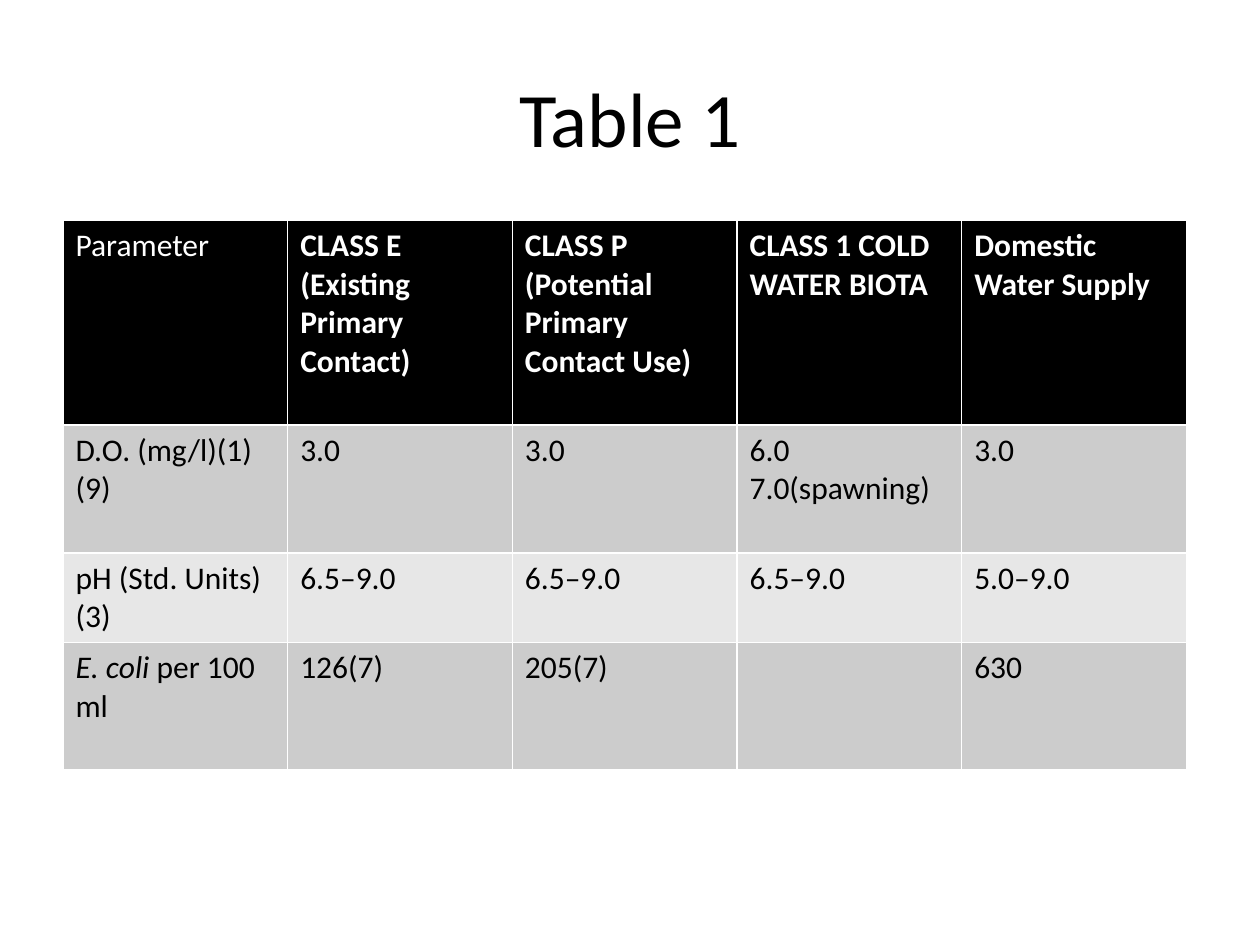
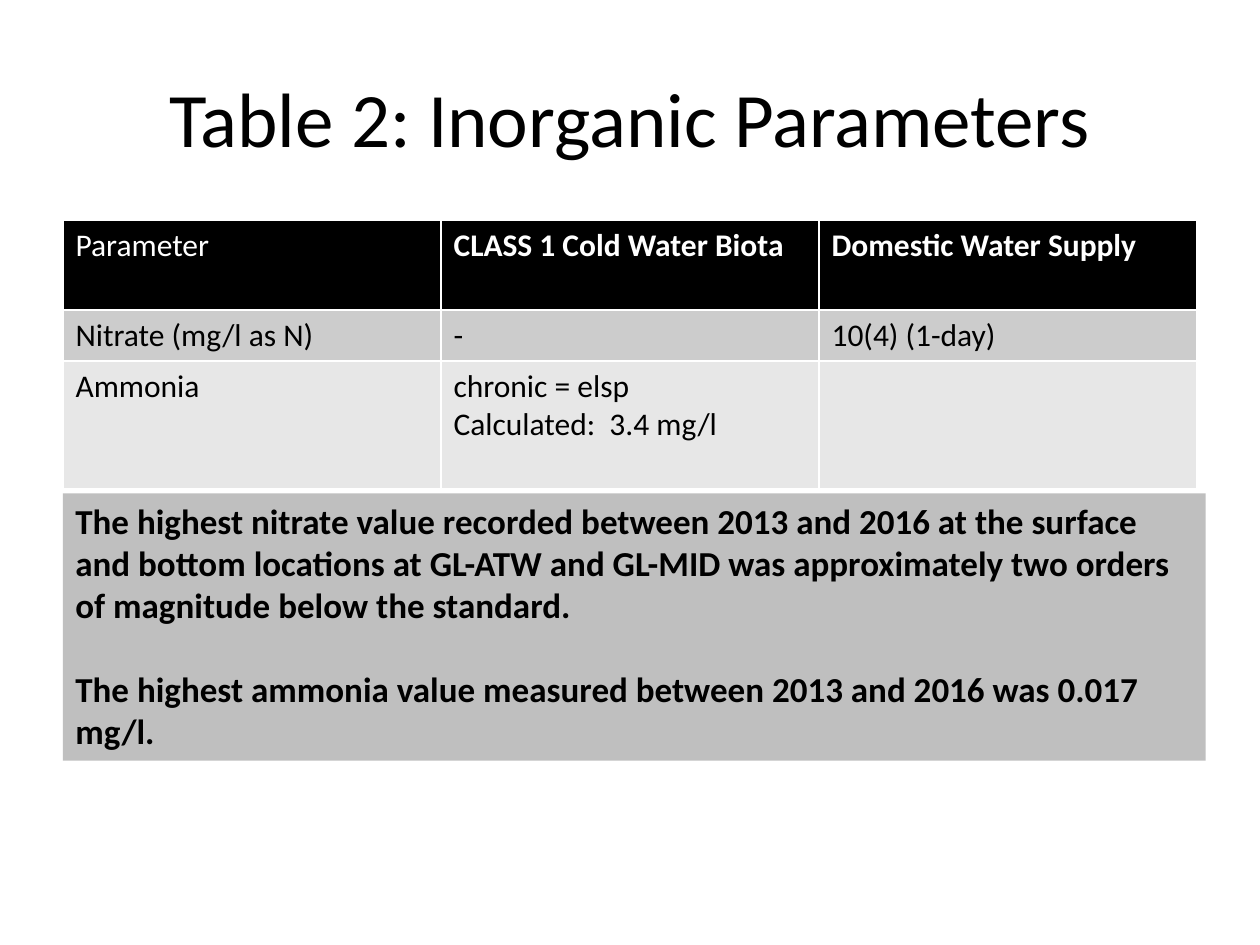
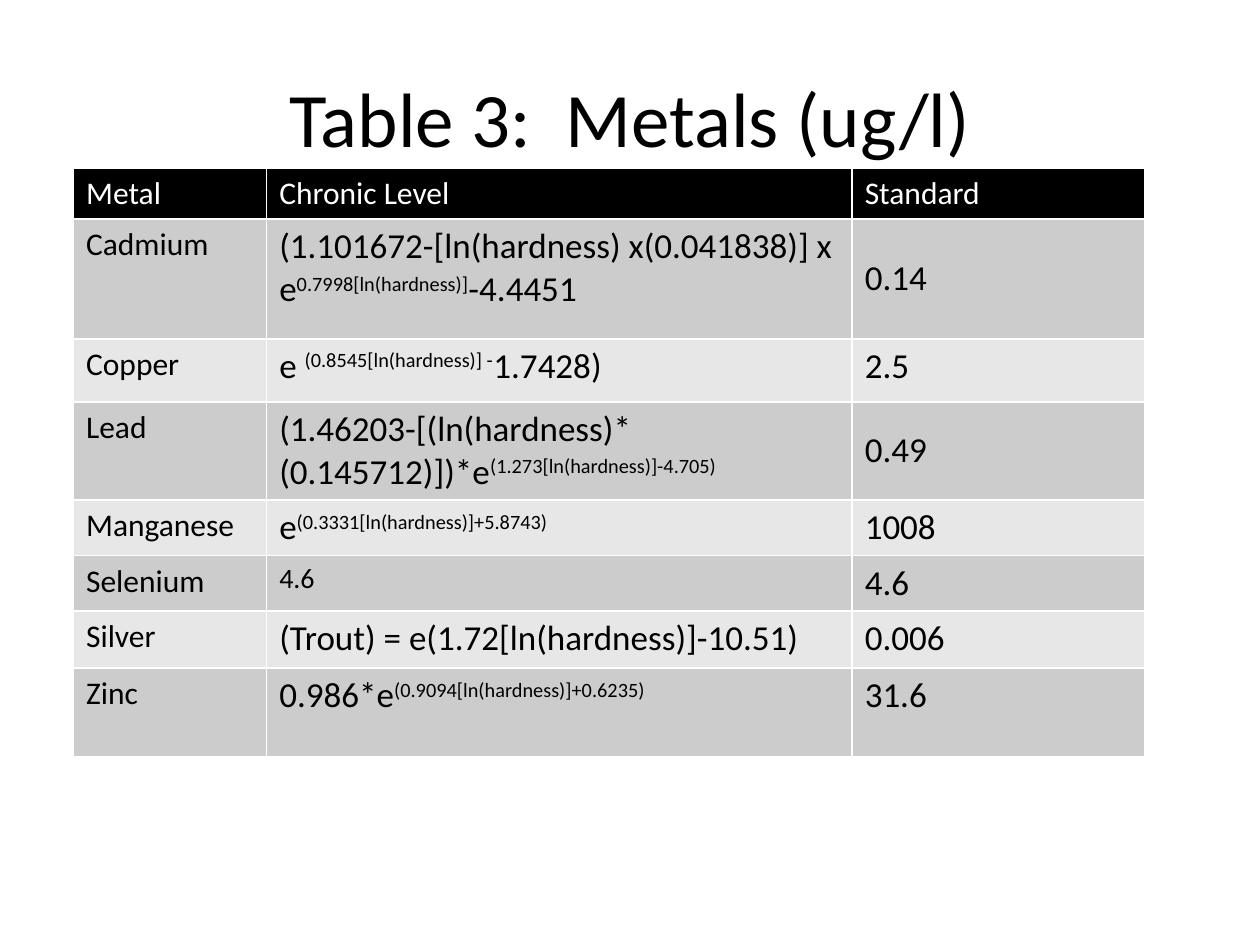
from pptx import Presentation
from pptx.dml.color import RGBColor
from pptx.enum import text as t
from pptx.util import Pt

BLACK = RGBColor(0x00, 0x00, 0x00)
WHITE = RGBColor(0xFF, 0xFF, 0xFF)
DARK_BAND = RGBColor(0xCC, 0xCC, 0xCC)
LIGHT_BAND = RGBColor(0xE7, 0xE7, 0xE7)
NOTE_GREY = RGBColor(0xBF, 0xBF, 0xBF)
FONT = "Calibri"
TITLE_ONLY = 5
SUPERSCRIPT = "^"
ITALIC = "_"


def write(frame, content, size=18, color=BLACK, bold=False, align=t.PP_ALIGN.LEFT):
    for index, line in enumerate(content.split("\n")):
        paragraph = frame.paragraphs[0] if index == 0 else frame.add_paragraph()
        paragraph.alignment = align
        for raised, stretch in enumerate(line.split(SUPERSCRIPT)):
            for slanted, words in enumerate(stretch.split(ITALIC)):
                if not words:
                    continue
                run = paragraph.add_run()
                run.text = words
                run.font.name = FONT
                run.font.size = Pt(size)
                run.font.color.rgb = color
                run.font.bold = bold
                run.font.italic = slanted % 2 == 1
                if raised % 2:
                    run.font._element.set("baseline", "30000")


class Deck:
    left = 36
    table_top = 126

    def __init__(self):
        self.presentation = Presentation()
        self.presentation.slide_width = Pt(720)
        self.presentation.slide_height = Pt(540)
        self.slide = None

    def add_slide(self, heading):
        layout = self.presentation.slide_layouts[TITLE_ONLY]
        self.slide = self.presentation.slides.add_slide(layout)
        title = self.slide.shapes.title
        title.left, title.top = Pt(self.left), Pt(21.6)
        title.width, title.height = Pt(648), Pt(90)
        title.text_frame.vertical_anchor = t.MSO_ANCHOR.MIDDLE
        write(title.text_frame, heading, size=44, align=t.PP_ALIGN.CENTER)

    def add_table(self, rows, widths, heights, left=left, top=table_top,
                  body_sizes=None, bold_headings=True):
        body_sizes = body_sizes or [18] * len(widths)
        table = self.slide.shapes.add_table(
            len(rows), len(widths), Pt(left), Pt(top),
            Pt(sum(widths)), Pt(sum(heights))).table
        for column, width in zip(table.columns, widths):
            column.width = Pt(width)
        for r, (entries, height) in enumerate(zip(rows, heights)):
            table.rows[r].height = Pt(height)
            for c, entry in enumerate(entries):
                cell = table.cell(r, c)
                cell.fill.solid()
                if r == 0:
                    cell.fill.fore_color.rgb = BLACK
                    write(cell.text_frame, entry, color=WHITE,
                          bold=bold_headings and c > 0)
                else:
                    cell.fill.fore_color.rgb = DARK_BAND if r % 2 else LIGHT_BAND
                    write(cell.text_frame, entry, size=body_sizes[c])
        return table

    def add_note(self, content, top, width, height):
        note = self.slide.shapes.add_textbox(
            Pt(self.left), Pt(top), Pt(width), Pt(height))
        note.fill.solid()
        note.fill.fore_color.rgb = NOTE_GREY
        note.text_frame.word_wrap = True
        write(note.text_frame, content, size=20, bold=True)
        return note.text_frame


def general_parameters(deck):
    deck.add_slide("Table 1")
    deck.add_table([
        ["Parameter", "CLASS E (Existing Primary Contact)",
         "CLASS P (Potential Primary Contact Use)",
         "CLASS 1 COLD WATER BIOTA", "Domestic Water Supply"],
        ["D.O. (mg/l)(1)(9)", "3.0", "3.0", "6.0\n7.0(spawning)", "3.0"],
        ["pH (Std. Units)(3)", "6.5–9.0", "6.5–9.0", "6.5–9.0", "5.0–9.0"],
        ["_E. coli _per 100 ml", "126(7)", "205(7)", "", "630"],
    ], widths=[128.4] * 5, heights=[117, 73, 51.1, 73])


def inorganic_parameters(deck):
    deck.add_slide("Table 2: Inorganic Parameters")
    deck.add_table([
        ["Parameter", "CLASS 1 Cold Water Biota", "Domestic Water Supply"],
        ["Nitrate (mg/l as N)", "-", "10(4) (1-day)"],
        ["Ammonia", "chronic = elsp\nCalculated:  3.4 mg/l", ""],
    ], widths=[216] * 3, heights=[51.1, 29.2, 73])
    findings = deck.add_note(
        "The highest nitrate value recorded between 2013 and 2016 at the surface\n"
        "and bottom locations at GL-ATW and GL-MID was approximately two orders\n"
        "of magnitude below the standard.\n"
        "The highest ammonia value measured between 2013 and 2016 was 0.017\n"
        "mg/l.", top=282, width=653, height=152.7)
    findings.paragraphs[3].space_before = Pt(24)


def metals(deck):
    deck.add_slide("Table 3:  Metals (ug/l)")
    levels = deck.add_table([
        ["Metal", "Chronic Level", "Standard"],
        ["Cadmium",
         "(1.101672-[ln(hardness) x(0.041838)] x e^0.7998[ln(hardness)]^-4.4451",
         "0.14"],
        ["Copper", "e ^(0.8545[ln(hardness)] -^1.7428)", "2.5"],
        ["Lead",
         "(1.46203-[(ln(hardness)* (0.145712)])*e^(1.273[ln(hardness)]-4.705)",
         "0.49"],
        ["Manganese", "e^(0.3331[ln(hardness)]+5.8743)", "1008"],
        ["Selenium", "4.6", "4.6"],
        ["Silver", "(Trout) = e(1.72[ln(hardness)]-10.51)", "0.006"],
        ["Zinc", "0.986*e^(0.9094[ln(hardness)]+0.6235)", "31.6"],
    ], widths=[110.4, 334.6, 167], left=42, top=96,
        heights=[29.2, 68.4, 36, 56, 31.7, 31.7, 32.4, 51],
        body_sizes=[18, 20, 20], bold_headings=False)
    for cadmium_or_lead in (1, 3):
        levels.cell(cadmium_or_lead, 2).vertical_anchor = t.MSO_ANCHOR.MIDDLE
    selenium_level = levels.cell(5, 1).text_frame.paragraphs[0]
    selenium_level.runs[0].font.size = Pt(16)


def main():
    deck = Deck()
    general_parameters(deck)
    inorganic_parameters(deck)
    metals(deck)
    deck.presentation.save("out.pptx")


if __name__ == "__main__":
    main()
